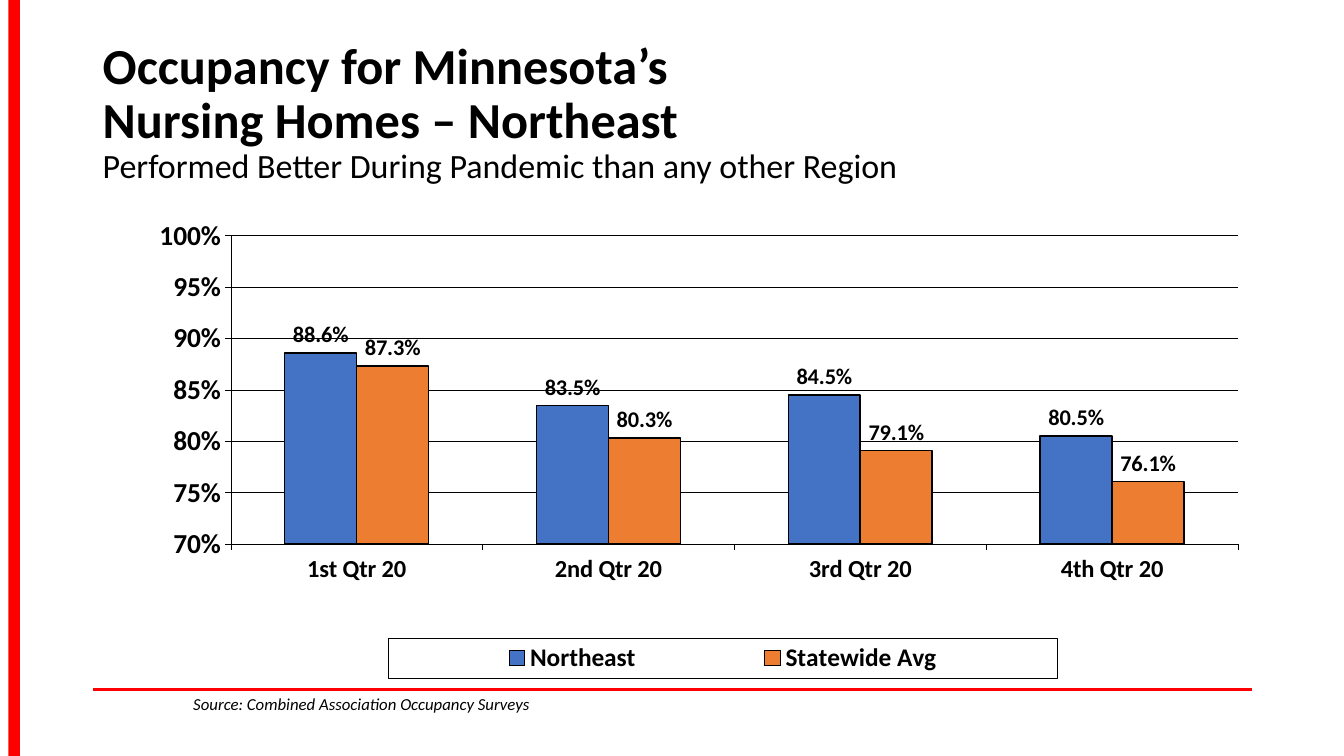
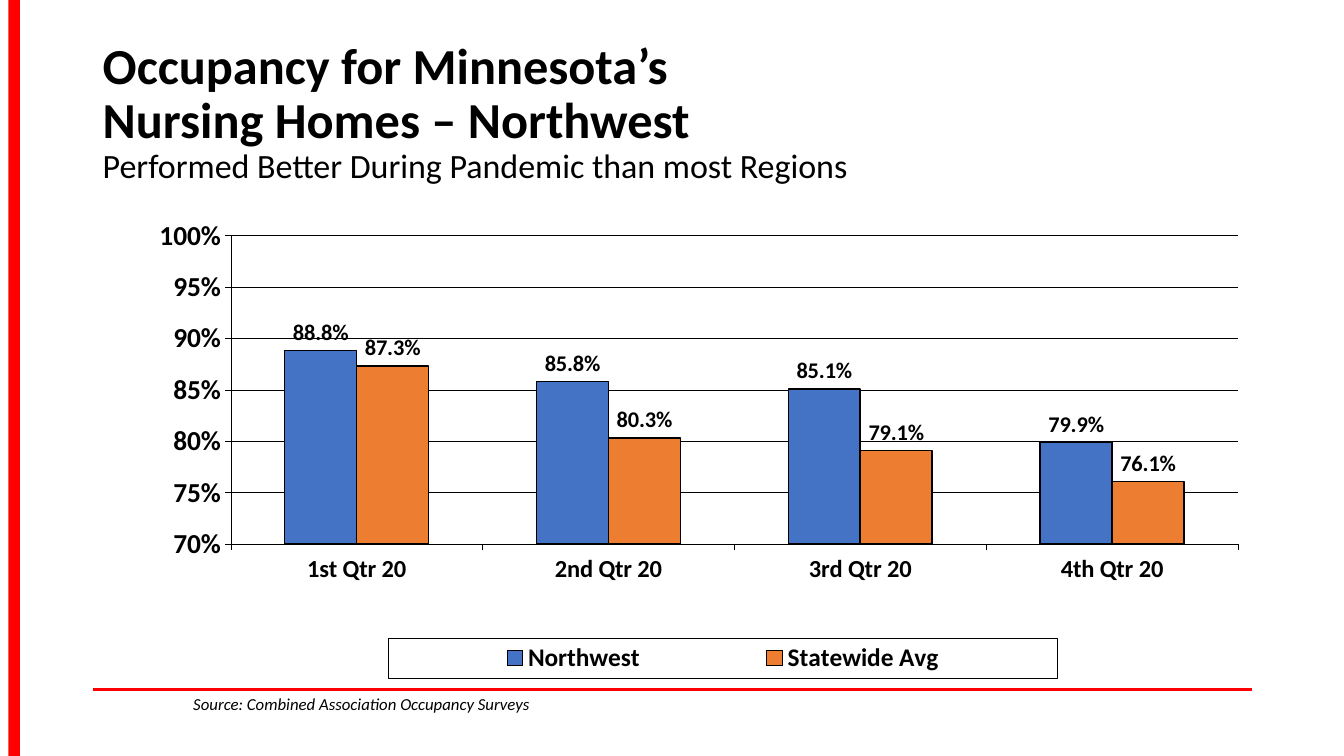
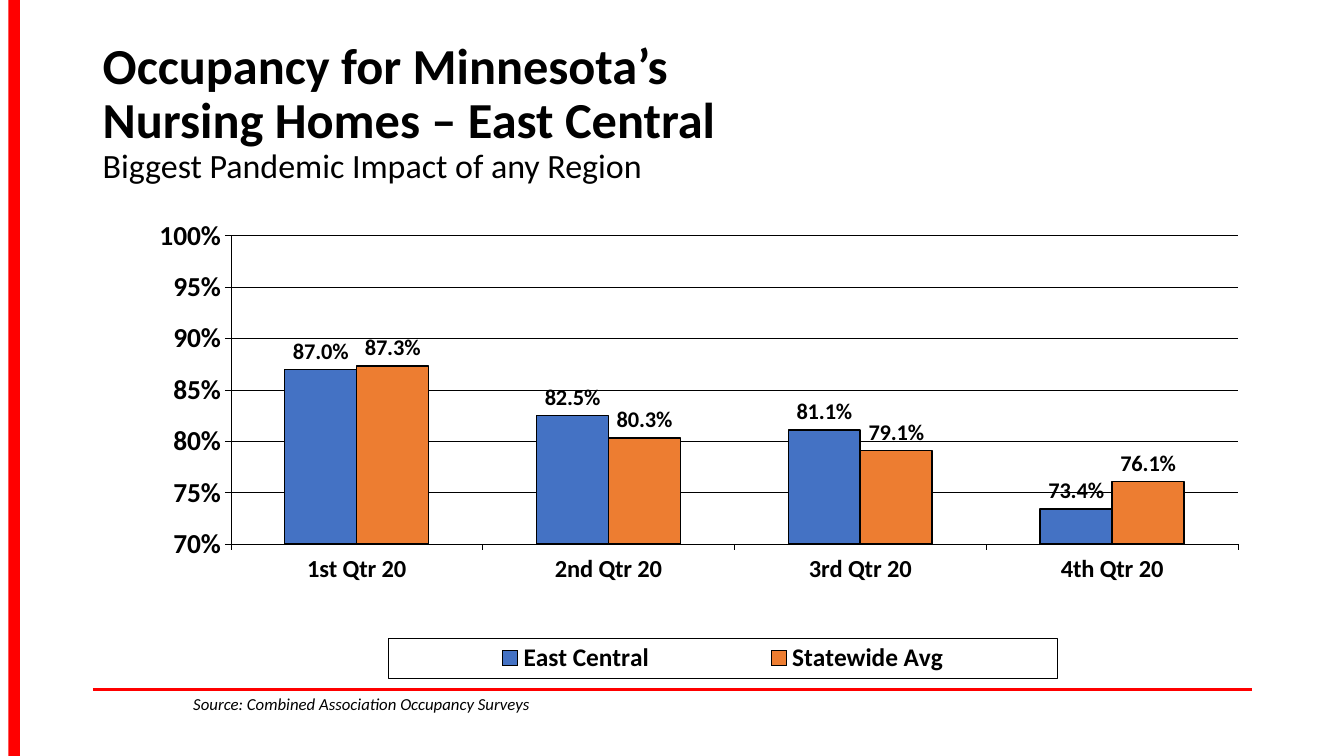
from pptx import Presentation
from pptx.chart.data import CategoryChartData
from pptx.dml.color import RGBColor
from pptx.enum.chart import XL_CHART_TYPE, XL_LABEL_POSITION, XL_LEGEND_POSITION, XL_TICK_MARK
from pptx.enum.shapes import MSO_CONNECTOR, MSO_SHAPE
from pptx.enum.text import MSO_ANCHOR
from pptx.oxml import parse_xml
from pptx.oxml.ns import qn
from pptx.util import Cm, Pt
from lxml.etree import SubElement

# Content
REGIONS = [
    ("Northeast", "Performed Better During Pandemic than any other Region",
     (0.886, 0.835, 0.845, 0.805)),
    ("Northwest", "Performed Better During Pandemic than most Regions",
     (0.888, 0.858, 0.851, 0.799)),
    ("East Central", "Biggest Pandemic Impact of any Region",
     (0.87, 0.825, 0.811, 0.734)),
]
QUARTERS = ["1st Qtr 20", "2nd Qtr 20", "3rd Qtr 20", "4th Qtr 20"]
STATEWIDE = ("Statewide Avg", (0.873, 0.803, 0.791, 0.761))
SOURCE = "Source: Combined Association Occupancy Surveys"

# Shared style
FONT = "Calibri"
BLACK, RED = "000000", "FF0000"
SERIES_COLORS = ["4472C4", "ED7D31"]
HAIRLINE = 0.27
LEFT, WIDTH = 2.34, 29.21
SLIDE_WIDTH, SLIDE_HEIGHT = 33.87, 19.05
RULE_TOP = 17.37
PLOT_BOX = (0.12, 0.07, 0.87, 0.64)
PLOT_BOX = (0.119, 0.071, 0.869, 0.643)
LEGEND_BOX = (0.255, 0.91, 0.577, 0.083)


def color(hex_string):
    return RGBColor.from_string(hex_string)


def style_font(font, size, bold=False, italic=False):
    font.name, font.size = FONT, Pt(size)
    font.bold, font.italic = bold, italic
    font.color.rgb = color(BLACK)


def style_line(line, width, hex_string=BLACK):
    line.color.rgb = color(hex_string)
    line.width = Pt(width)


def add_text(slide, left, top, width, height, lines, anchor=MSO_ANCHOR.TOP, spacing=1.0):
    """Each line is (text, size, bold, italic)."""
    box = slide.shapes.add_textbox(Cm(left), Cm(top), Cm(width), Cm(height))
    frame = box.text_frame
    frame.word_wrap = True
    frame.vertical_anchor = anchor
    for index, (text, *look) in enumerate(lines):
        paragraph = frame.add_paragraph() if index else frame.paragraphs[0]
        paragraph.text = text
        paragraph.line_spacing = spacing
        style_font(paragraph.font, *look)


def add_frame(slide):
    # Red rule and side band
    rule = slide.shapes.add_connector(
        MSO_CONNECTOR.STRAIGHT, Cm(LEFT), Cm(RULE_TOP), Cm(LEFT + WIDTH), Cm(RULE_TOP))
    style_line(rule.line, 2, RED)
    SubElement(rule._element.spPr, qn("a:effectLst"))
    band = slide.shapes.add_shape(
        MSO_SHAPE.RECTANGLE, Cm(0.21), 0, Cm(0.29), Cm(SLIDE_HEIGHT))
    band.shadow.inherit = False
    band.fill.solid()
    band.fill.fore_color.rgb = color(RED)
    band.line.fill.background()


def set_layout(element, position, box, inner=False):
    """Place a plot area or legend by fractions of the chart."""
    for old in element.findall(qn("c:layout")):
        element.remove(old)
    target = '<c:layoutTarget val="inner"/>' if inner else ""
    modes = "".join(f'<c:{side}Mode val="edge"/>' for side in "xy")
    sizes = "".join(f'<c:{side} val="{value}"/>' for side, value in zip("xywh", box))
    element.insert(position, parse_xml(
        '<c:layout xmlns:c="http://schemas.openxmlformats.org/drawingml/2006/chart">'
        f"<c:manualLayout>{target}{modes}{sizes}</c:manualLayout></c:layout>"))


def add_occupancy_chart(slide, region, values):
    data = CategoryChartData()
    data.categories = QUARTERS
    for name, numbers in [(region, values), STATEWIDE]:
        data.add_series(name, numbers)
    chart = slide.shapes.add_chart(
        XL_CHART_TYPE.COLUMN_CLUSTERED, Cm(LEFT), Cm(5.08), Cm(WIDTH), Cm(12.09), data).chart
    chart.has_title = False
    style_font(chart.font, 19.6, bold=True)

    # Columns and value labels
    plot = chart.plots[0]
    plot.gap_width = 150
    plot.vary_by_categories = False
    for series, fill in zip(plot.series, SERIES_COLORS):
        series.format.fill.solid()
        series.format.fill.fore_color.rgb = color(fill)
        style_line(series.format.line, 1.09)
    plot.has_data_labels = True
    labels = plot.data_labels
    labels.show_value = True
    labels.position = XL_LABEL_POSITION.OUTSIDE_END
    labels.number_format, labels.number_format_is_linked = "0.0%", False
    style_font(labels.font, 16, bold=True)

    # Axes
    value_axis = chart.value_axis
    for axis, size in [(chart.category_axis, 17.5), (value_axis, 19.6)]:
        axis.major_tick_mark = XL_TICK_MARK.OUTSIDE
        style_line(axis.format.line, HAIRLINE)
        style_font(axis.tick_labels.font, size, bold=True)
    value_axis.minimum_scale, value_axis.maximum_scale = 0.7, 1
    value_axis.major_unit = 0.05
    value_axis.tick_labels.number_format = "0%"
    value_axis.tick_labels.number_format_is_linked = False
    value_axis.has_major_gridlines = True
    style_line(value_axis.major_gridlines.format.line, HAIRLINE)

    # Legend with a thin outline
    chart.has_legend = True
    legend = chart.legend
    legend.position = XL_LEGEND_POSITION.BOTTOM
    legend.include_in_layout = False
    style_font(legend.font, 18.1, bold=True)
    legend._element.find(qn("c:txPr")).addprevious(parse_xml(
        '<c:spPr xmlns:c="http://schemas.openxmlformats.org/drawingml/2006/chart" '
        'xmlns:a="http://schemas.openxmlformats.org/drawingml/2006/main">'
        f'<a:ln w="{Pt(HAIRLINE)}"><a:solidFill><a:srgbClr val="{BLACK}"/></a:solidFill></a:ln>'
        "</c:spPr>"))
    set_layout(legend._element, 1, LEGEND_BOX)
    set_layout(chart._chartSpace.chart.plotArea, 0, PLOT_BOX, inner=True)


def main():
    presentation = Presentation()
    presentation.slide_width, presentation.slide_height = Cm(SLIDE_WIDTH), Cm(SLIDE_HEIGHT)
    for region, subtitle, values in REGIONS:
        slide = presentation.slides.add_slide(presentation.slide_layouts[6])
        add_frame(slide)
        title = [("Occupancy for Minnesota’s", 36, True),
                 (f"Nursing Homes – {region}", 36, True),
                 (subtitle, 24.3)]
        add_text(slide, LEFT, 1.02, WIDTH, 3.68, title, MSO_ANCHOR.MIDDLE, 0.9)
        add_occupancy_chart(slide, region, values)
        add_text(slide, 4.62, 17.35, 13.39, 1.27, [(SOURCE, 12, False, True)])
    presentation.save("out.pptx")


if __name__ == "__main__":
    main()
